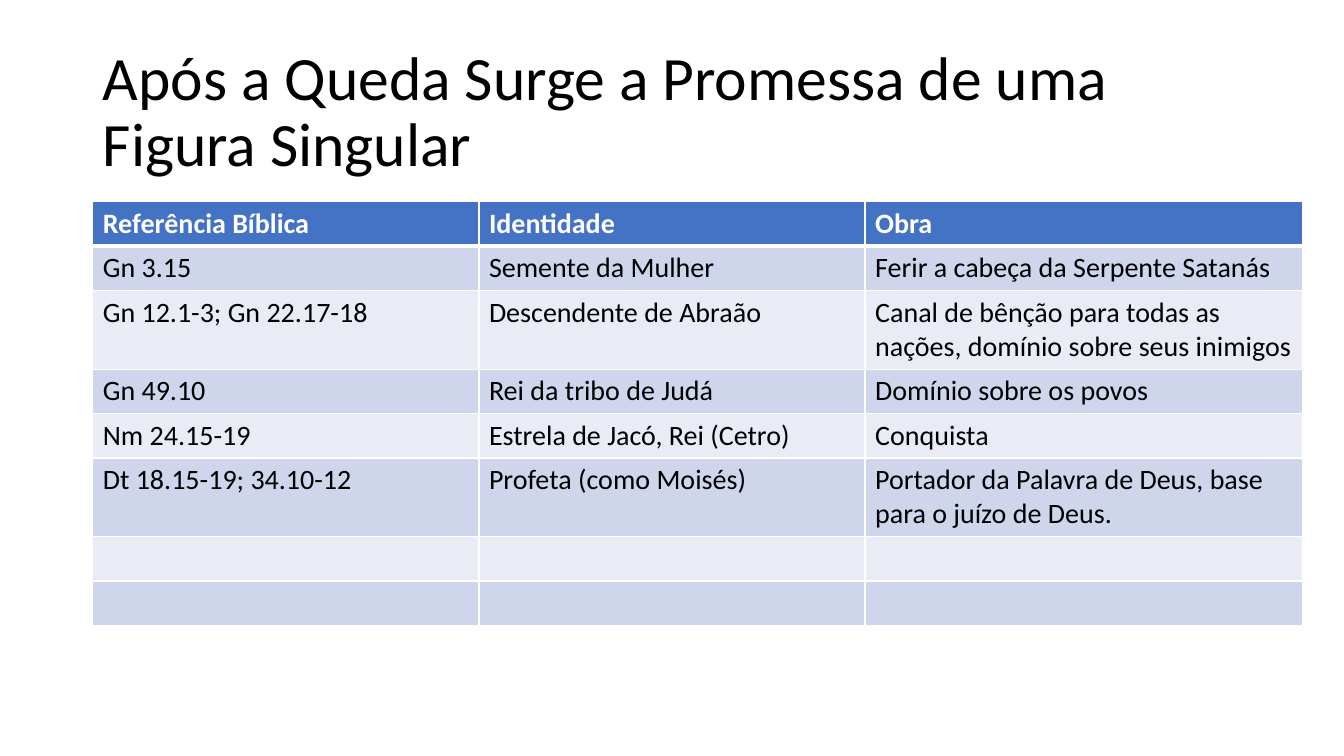
from lxml import etree
from pptx import Presentation
from pptx.dml.color import RGBColor
from pptx.enum.text import MSO_ANCHOR
from pptx.oxml.ns import qn
from pptx.util import Inches, Pt

MIDDLE = MSO_ANCHOR.MIDDLE
FONT = "Calibri"
COLORS = {
    "text": "000000",
    "white": "FFFFFF",
    "header": "4472C4",
    "band_dark": "CFD5EA",
    "band_light": "E9EBF5",
}

# Grid in inches
LEFT = 0.92
COL_WIDTHS = [3.83, 3.83, 4.34]
ROW_ONE_LINE, ROW_TWO_LINES = 0.44, 0.78
TWO_LINE_ROWS = {2, 5}

TITLE = "Após a Queda Surge a Promessa de uma Figura Singular"
PROMISES = [
    ("Referência Bíblica", "Identidade", "Obra"),
    ("Gn 3.15", "Semente da Mulher", "Ferir a cabeça da Serpente Satanás"),
    ("Gn 12.1-3; Gn 22.17-18", "Descendente de Abraão",
     "Canal de bênção para todas as nações, domínio sobre seus inimigos"),
    ("Gn 49.10", "Rei da tribo de Judá", "Domínio sobre os povos"),
    ("Nm 24.15-19", "Estrela de Jacó, Rei (Cetro)", "Conquista"),
    ("Dt 18.15-19; 34.10-12", "Profeta (como Moisés)",
     "Portador da Palavra de Deus, base para o juízo de Deus."),
    ("", "", ""),
    ("", "", ""),
]


def rgb(name):
    return RGBColor.from_string(COLORS[name])


def add_run(p, text, size, color, bold=False):
    r = p.add_run()
    r.text = text
    r.font.name = FONT
    r.font.size = Pt(size)
    r.font.bold = bold
    r.font.color.rgb = rgb(color)


def add_title(s, text):
    sp = s.shapes.title
    sp.left, sp.top = Inches(LEFT), Inches(0.4)
    sp.width, sp.height = Inches(11.5), Inches(1.45)
    tf = sp.text_frame
    tf.word_wrap = True
    tf.vertical_anchor = MIDDLE
    p = tf.paragraphs[0]
    p.line_spacing = 0.9
    add_run(p, text, 44, "text")


def set_borders(cell, widths):
    tcPr = cell._tc.get_or_add_tcPr()
    for side, width in widths.items():
        ln = etree.SubElement(tcPr, qn(f"a:ln{side}"), w=str(Pt(width)))
        fill = etree.SubElement(ln, qn("a:solidFill"))
        etree.SubElement(fill, qn("a:srgbClr"), val=COLORS["white"])


def format_cell(cell, text, row):
    header = row == 0
    # Borders come before the fill; a thick rule separates the header
    set_borders(cell, {"L": 1, "R": 1, "T": 3 if row == 1 else 1,
                       "B": 3 if header else 1})
    band = "band_dark" if row % 2 else "band_light"
    cell.fill.solid()
    cell.fill.fore_color.rgb = rgb("header" if header else band)
    if text:
        add_run(cell.text_frame.paragraphs[0], text, 20,
                "white" if header else "text", header)


def add_promise_table(s, rows):
    heights = [ROW_TWO_LINES if i in TWO_LINE_ROWS else ROW_ONE_LINE
               for i in range(len(rows))]
    table = s.shapes.add_table(
        len(rows), len(COL_WIDTHS), Inches(LEFT), Inches(2),
        Inches(sum(COL_WIDTHS)), Inches(sum(heights))).table
    for column, width in zip(table.columns, COL_WIDTHS):
        column.width = Inches(width)
    for i, (texts, height) in enumerate(zip(rows, heights)):
        table.rows[i].height = Inches(height)
        for j, text in enumerate(texts):
            format_cell(table.cell(i, j), text, i)


def main():
    prs = Presentation()
    prs.slide_width, prs.slide_height = Inches(13.33), Inches(7.5)
    s = prs.slides.add_slide(prs.slide_layouts[5])
    s.background.fill.solid()
    s.background.fill.fore_color.rgb = rgb("white")

    # Title, left aligned over the table
    add_title(s, TITLE)
    s.shapes.title.text_frame.paragraphs[0].alignment = 1

    # Promises with their references
    add_promise_table(s, PROMISES)
    prs.save("out.pptx")


if __name__ == "__main__":
    main()
